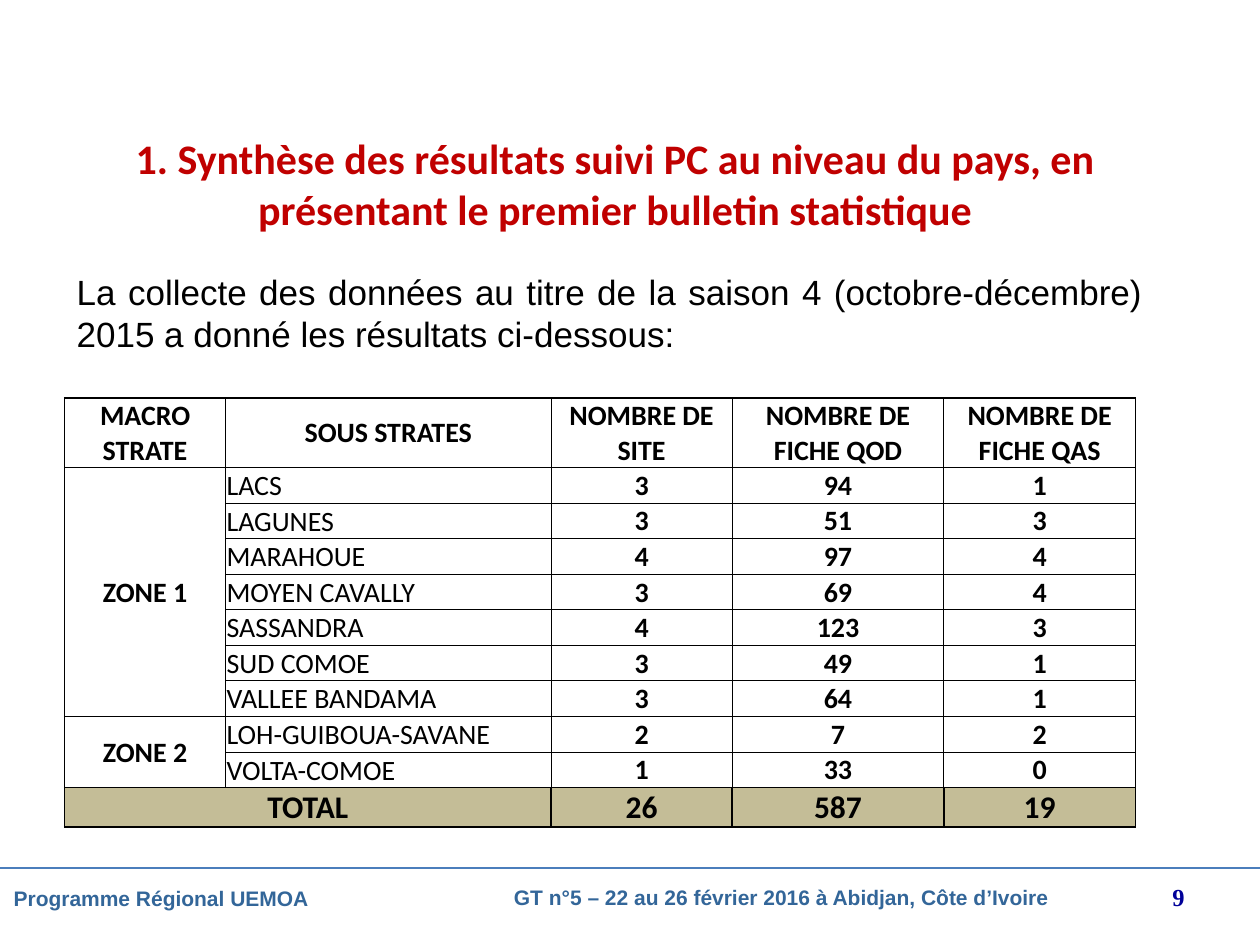
"""Build the slide on monitoring results by stratum, with its summary table."""
from lxml import etree
from pptx import Presentation
from pptx.dml.color import RGBColor
from pptx.enum import shapes, text
from pptx.oxml import ns
from pptx.util import Pt

BLACK = RGBColor(0x00, 0x00, 0x00)
RED = RGBColor(0xC0, 0x00, 0x00)
NAVY = RGBColor(0x00, 0x00, 0x99)
STEEL = RGBColor(0x33, 0x66, 0x99)
RULE_BLUE = RGBColor(0x4B, 0x7E, 0xBC)
TAN = RGBColor(0xC4, 0xBD, 0x97)

LEFT, CENTER, RIGHT, JUSTIFY = (
    text.PP_ALIGN.LEFT, text.PP_ALIGN.CENTER, text.PP_ALIGN.RIGHT, text.PP_ALIGN.JUSTIFY)
TOP, MIDDLE, BOTTOM = (
    text.MSO_ANCHOR.TOP, text.MSO_ANCHOR.MIDDLE, text.MSO_ANCHOR.BOTTOM)


def write(text_frame, words, font_name, size, color, bold, alignment):
    text_frame.text = words
    paragraph = text_frame.paragraphs[0]
    paragraph.alignment = alignment
    font = paragraph.runs[0].font
    font.name, font.size, font.bold = font_name, Pt(size), bold
    font.color.rgb = color


def add_border(cell, side, width):
    properties = cell._tc.get_or_add_tcPr()
    line = etree.SubElement(properties, ns.qn(f"a:ln{side}"), w=str(Pt(width)))
    fill = etree.SubElement(line, ns.qn("a:solidFill"))
    etree.SubElement(fill, ns.qn("a:srgbClr"), val=str(BLACK))


presentation = Presentation()
presentation.slide_width, presentation.slide_height = Pt(720), Pt(540)
slide = presentation.slides.add_slide(presentation.slide_layouts[6])

footer_rule = slide.shapes.add_connector(
    shapes.MSO_CONNECTOR.STRAIGHT, Pt(0), Pt(496), Pt(720), Pt(496))
footer_rule.line.color.rgb = RULE_BLUE
footer_rule.line.width = Pt(0.75)
etree.SubElement(footer_rule._element.spPr, ns.qn("a:effectLst"))

TEXT_BOXES = [
    ("1. Synthèse des résultats suivi PC au niveau du pays, en présentant le premier "
     "bulletin statistique", (31, 73.5, 641, 62.5), "Calibri", 24, RED, True, CENTER, MIDDLE),
    ("La collecte des données au titre de la saison 4 (octobre-décembre) 2015 a donné "
     "les résultats ci-dessous:", (36.7, 151.2, 623.5, 55.4),
     "Arial", 20, BLACK, False, JUSTIFY, TOP),
    ("Programme Régional UEMOA", (0.7, 502.6, 295, 28.8), "Arial", 12, STEEL, True, LEFT, TOP),
    ("GT n°5 – 22 au 26 février 2016 à Abidjan, Côte d’Ivoire",
     (286.6, 501.8, 374.4, 28.8), "Arial", 12, STEEL, True, LEFT, TOP),
    ("9", (632.2, 500.4, 51.8, 28.8), "Times New Roman", 14, NAVY, True, RIGHT, TOP),
]
for words, box, font_name, size, color, bold, alignment, anchor in TEXT_BOXES:
    text_frame = slide.shapes.add_textbox(*map(Pt, box)).text_frame
    text_frame.word_wrap = True
    text_frame.vertical_anchor = anchor
    write(text_frame, words, font_name, size, color, bold, alignment)

ROWS = [
    ("MACRO STRATE", "SOUS STRATES", "NOMBRE DE SITE", "NOMBRE DE FICHE QOD",
     "NOMBRE DE FICHE QAS"),
    ("ZONE 1", "LACS", "3", "94", "1"),
    ("", "LAGUNES", "3", "51", "3"),
    ("", "MARAHOUE", "4", "97", "4"),
    ("", "MOYEN CAVALLY", "3", "69", "4"),
    ("", "SASSANDRA", "4", "123", "3"),
    ("", "SUD COMOE", "3", "49", "1"),
    ("", "VALLEE BANDAMA", "3", "64", "1"),
    ("ZONE 2", "LOH-GUIBOUA-SAVANE", "2", "7", "2"),
    ("", "VOLTA-COMOE", "1", "33", "0"),
    ("TOTAL", "", "26", "587", "19"),
]
COLUMN_WIDTHS = [92, 186, 103.5, 121, 109.5]
ROW_HEIGHTS = [39.6] + [20.35] * 9 + [22.5]
GROUP_STARTS = {0, 1, 8, 10, 11}
TOTAL_ROW = len(ROWS) - 1
LAST_COLUMN = len(COLUMN_WIDTHS) - 1

table = slide.shapes.add_table(
    len(ROWS), len(COLUMN_WIDTHS), Pt(36.9), Pt(227.5),
    Pt(sum(COLUMN_WIDTHS)), Pt(sum(ROW_HEIGHTS))).table
table.first_row = table.horz_banding = False
for column, width in zip(table.columns, COLUMN_WIDTHS):
    column.width = Pt(width)
for row, height in zip(table.rows, ROW_HEIGHTS):
    row.height = Pt(height)

for row_index, values in enumerate(ROWS):
    is_total = row_index == TOTAL_ROW
    for column_index, value in enumerate(values):
        cell = table.cell(row_index, column_index)
        is_name = column_index == 1 and 0 < row_index < TOTAL_ROW
        cell.margin_left = cell.margin_right = cell.margin_top = Pt(0.6)
        cell.margin_bottom = Pt(0)
        cell.vertical_anchor = BOTTOM if is_name else MIDDLE
        if value:
            write(cell.text_frame, value, "Calibri", 18 if is_total else 16, BLACK,
                  not is_name, LEFT if is_name else CENTER)
        heavy_sides = {
            "L": column_index == 0,
            "R": column_index == LAST_COLUMN,
            "T": row_index in GROUP_STARTS,
            "B": row_index + 1 in GROUP_STARTS,
        }
        for side, heavy in heavy_sides.items():
            add_border(cell, side, 1 if heavy or is_total else 0.5)
        if is_total:
            cell.fill.solid()
            cell.fill.fore_color.rgb = TAN
        else:
            cell.fill.background()

for first, last in [((1, 0), (7, 0)), ((8, 0), (9, 0)), ((10, 0), (10, 1))]:
    table.cell(*first).merge(table.cell(*last))

presentation.save("out.pptx")
